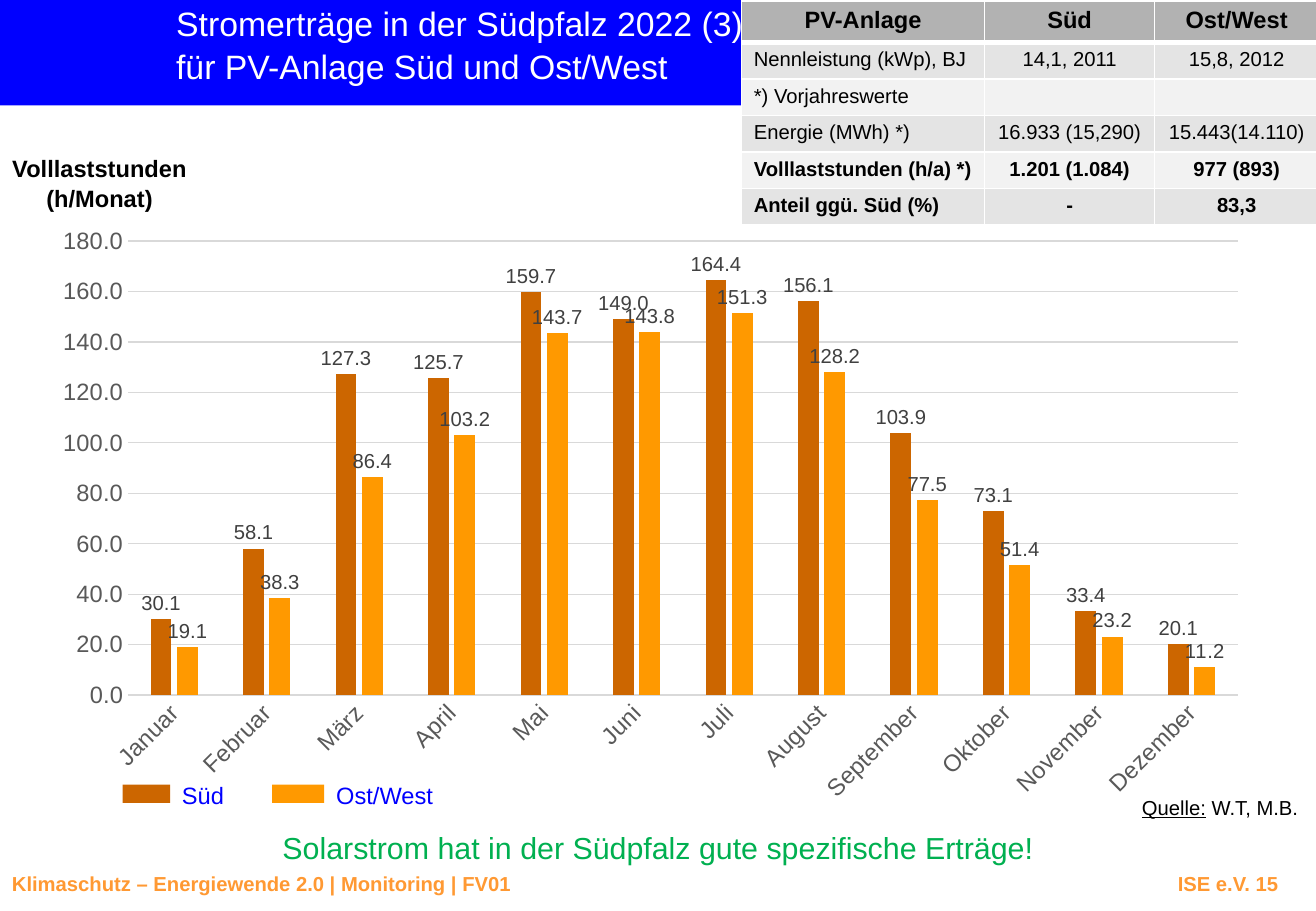
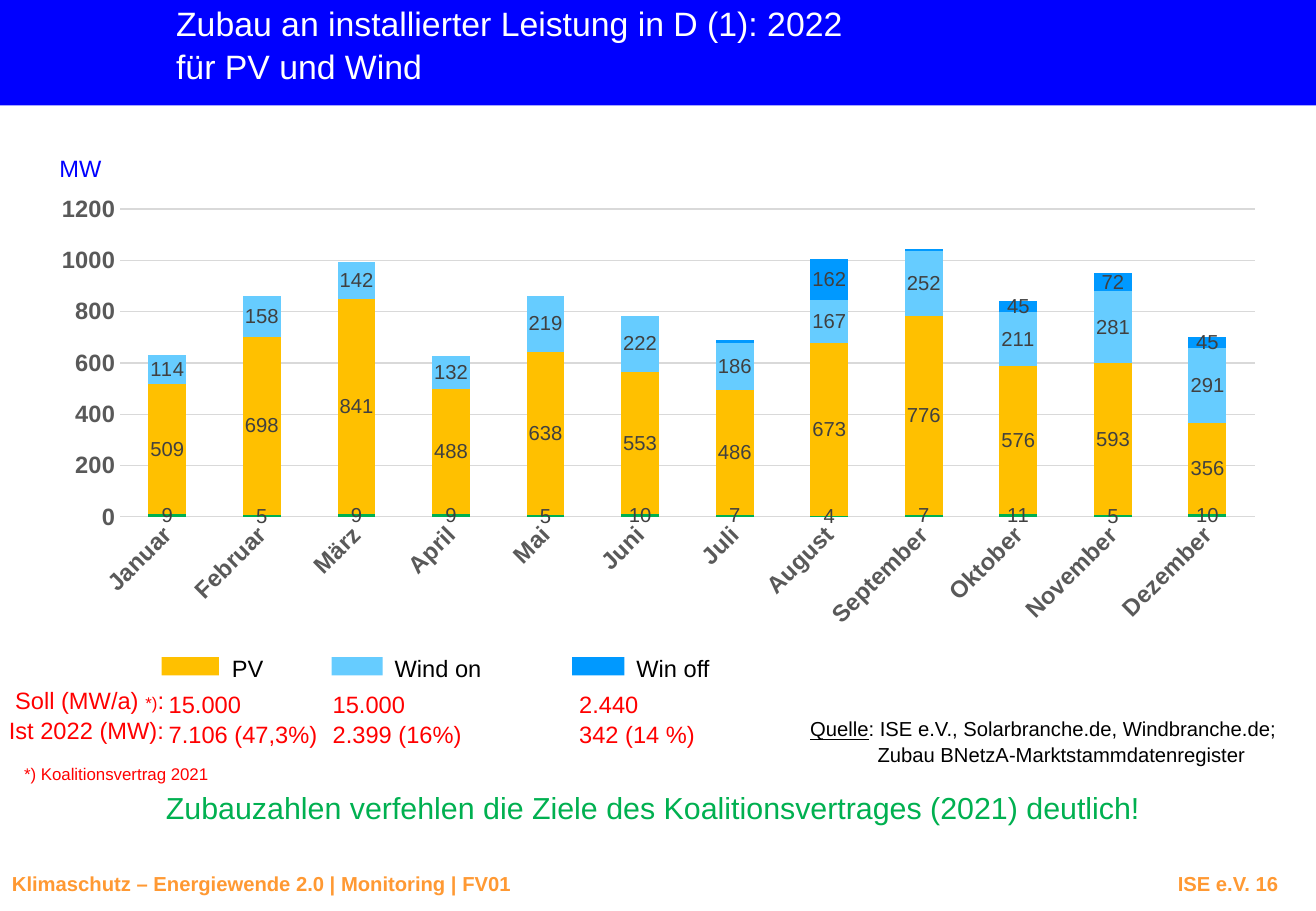
import pptx
import pptx.util
import pptx.chart.data
import pptx.dml.color
import pptx.enum.chart
import pptx.enum.shapes
import pptx.enum.text
import pptx.oxml
import pptx.oxml.ns

Pt = pptx.util.Pt
qn = pptx.oxml.ns.qn
ALIGN = pptx.enum.text.PP_ALIGN
CHART = pptx.enum.chart.XL_CHART_TYPE
PLACE = pptx.enum.chart.XL_LABEL_POSITION

FONT = "Arial"
WIDTH, HEIGHT = 780, 540
HUES = {
    "band": "0000FF", "white": "FFFFFF", "black": "000000", "foot": "FF9933",
    "green": "00B050", "red": "FF0000", "blue": "0000FF",
    "south": "CC6600", "east": "FF9900",
    "sun": "FFC000", "shore": "66CCFF", "sea": "0099FF",
    "head": "B2B2B2", "odd": "E4E4E4", "even": "F2F2F2",
    "axis": "595959", "value": "404040", "grid": "D9D9D9",
}
MONTHS = ["Januar", "Februar", "März", "April", "Mai", "Juni", "Juli",
          "August", "September", "Oktober", "November", "Dezember"]


def hue(name):
    return pptx.dml.color.RGBColor.from_string(HUES[name])


def points(box):
    return [Pt(side) for side in box]


def style(font, size, color, bold=False, under=None):
    font.name = FONT
    font.size = Pt(size)
    font.bold = bold
    font.underline = under
    font.color.rgb = hue(color)


def write(frame, text, size=14, color="black", bold=False, align=ALIGN.LEFT,
          space=None):
    for index, line in enumerate(text.split("\n") if isinstance(text, str) else text):
        para = frame.paragraphs[0] if index == 0 else frame.add_paragraph()
        para.alignment = align
        para.line_spacing = space
        for part in [(line, {})] if isinstance(line, str) else line:
            words, extra = part
            if words:
                run = para.add_run()
                run.text = words
                style(run.font, **{"size": size, "color": color, "bold": bold, **extra})
            else:
                para._p.get_or_add_endParaRPr().set("sz", str(size * 100))


def label(slide, box, text, inset=(7.2, 3.6), wrap=False, **format):
    frame = slide.shapes.add_textbox(*points(box)).text_frame
    frame.word_wrap = wrap
    frame.margin_left = frame.margin_right = Pt(inset[0])
    frame.margin_top = frame.margin_bottom = Pt(inset[1])
    write(frame, text, space=1.05, **format)
    return frame


def block(slide, box, color):
    shape = slide.shapes.add_shape(pptx.enum.shapes.MSO_SHAPE.RECTANGLE, *points(box))
    shape.shadow.inherit = False
    shape.fill.solid()
    shape.fill.fore_color.rgb = hue(color)
    shape.line.fill.background()


def legend(slide, top, color, *items):
    for left, start, fill, text in items:
        block(slide, (left, top, min(34, start - left), 10.8), fill)
        label(slide, (start, top - 6.5, 75, 24.5), text, wrap=True, color=color)


def start(deck, title, number):
    slide = deck.slides.add_slide(deck.slide_layouts[6])
    block(slide, (0, 0, WIDTH, 62.6), "band")
    foot = {"size": 12, "color": "foot", "bold": True, "wrap": True}
    label(slide, (0, 512, 400, 21.6),
          "Klimaschutz – Energiewende 2.0 | Monitoring | FV01", **foot)
    label(slide, (600, 512, 164.8, 21.6), f"ISE e.V. {number}",
          align=ALIGN.RIGHT, **foot)
    label(slide, (104.4, 0.7, 588, 48.2), title, inset=(0, 0), wrap=True,
          size=20, color="white")
    return slide


def claim(slide, top, text, width=WIDTH):
    label(slide, (0, top, width, 31.7), text, inset=(5, 5), wrap=True,
          size=18, color="green", align=ALIGN.CENTER)


def border(cell, lower):
    props = cell._tc.get_or_add_tcPr()
    sides = [("L", 1), ("R", 1), ("T", 1), ("B", lower)]
    for index, (side, width) in enumerate(sides):
        props.insert(index, pptx.oxml.parse_xml(
            f'<a:ln{side} xmlns:a="http://schemas.openxmlformats.org/drawingml/2006/main"'
            f' w="{Pt(width)}"><a:solidFill><a:srgbClr val="{HUES["white"]}"/>'
            f'</a:solidFill></a:ln{side}>'))


def grid(slide, left, top, widths, rows, strong):
    table = slide.shapes.add_table(
        len(rows), len(widths), *points((left, top, sum(widths), 132.5))).table
    for column, width in zip(table.columns, widths):
        column.width = Pt(width)
    for r, row in enumerate(rows):
        table.rows[r].height = Pt(21.6 if r else 24.5)
        fill = ("odd" if r % 2 else "even") if r else "head"
        for c, text in enumerate(row):
            cell = table.cell(r, c)
            cell.fill.solid()
            cell.fill.fore_color.rgb = hue(fill)
            border(cell, 1 if r else 3)
            write(cell.text_frame, text, size=12 if r else 14, bold=r in strong,
                  align=ALIGN.CENTER if c or not r else ALIGN.LEFT)


def layout(chart, box, plot):
    shares = {
        "x": (plot[0] - box[0]) / box[2], "y": (plot[1] - box[1]) / box[3],
        "w": plot[2] / box[2], "h": plot[3] / box[3],
    }
    area = chart._chartSpace.chart.plotArea
    for old in area.findall(qn("c:layout")):
        area.remove(old)
    modes = '<c:xMode val="edge"/><c:yMode val="edge"/>'
    sizes = "".join(f'<c:{key} val="{share:.4f}"/>' for key, share in shares.items())
    area.insert(0, pptx.oxml.parse_xml(
        '<c:layout xmlns:c="http://schemas.openxmlformats.org/drawingml/2006/chart">'
        f'<c:manualLayout><c:layoutTarget val="inner"/>{modes}{sizes}'
        '</c:manualLayout></c:layout>'))


def bars(slide, kind, box, plot, series, top, step, gap, lap, place, format,
         bold=False):
    data = pptx.chart.data.CategoryChartData()
    data.categories = MONTHS
    for name, color, values, rule in series:
        data.add_series(name, values)
    chart = slide.shapes.add_chart(kind, *points(box), data).chart
    chart.has_legend = False
    chart.has_title = False
    style(chart.font, 10, "black")
    layout(chart, box, plot)

    months, scale = chart.category_axis, chart.value_axis
    for axis in (months, scale):
        axis.major_tick_mark = axis.minor_tick_mark = pptx.enum.chart.XL_TICK_MARK.NONE
        style(axis.tick_labels.font, 14, "axis", bold)
    scale.minimum_scale, scale.maximum_scale, scale.major_unit = 0, top, step
    scale.tick_labels.number_format = format
    scale.tick_labels.number_format_is_linked = False
    scale.format.line.fill.background()
    scale.has_major_gridlines = True
    for line in (months.format.line, scale.major_gridlines.format.line):
        line.color.rgb = hue("grid")
        line.width = Pt(0.75)
    months._element.find(qn("c:txPr")).find(qn("a:bodyPr")).set("rot", "-2700000")

    bar = chart.plots[0]
    bar.gap_width, bar.overlap = gap, lap
    bar.vary_by_categories = False
    for item, (name, color, values, rule) in zip(bar.series, series):
        item.invert_if_negative = False
        item.format.fill.solid()
        item.format.fill.fore_color.rgb = hue(color)
        marks = item.data_labels
        marks.show_value = True
        marks.number_format = rule
        marks.number_format_is_linked = False
        marks.position = place
        style(marks.font, 12, "value")


def yields(deck):
    slide = start(deck, "Stromerträge in der Südpfalz 2022 (3):\n"
                  "für PV-Anlage Süd und Ost/West", 15)
    label(slide, (676.8, 470.9, 97.2, 14.4),
          [[("Quelle:", {"under": True}), (" W.T, M.B.", {})]],
          inset=(0, 0), size=12)
    label(slide, (0, 87.1, 118, 41), "Volllaststunden\n(h/Monat)", bold=True,
          align=ALIGN.CENTER)
    grid(slide, 439.6, 0.7, (144, 100.8, 97.2), [
        ("PV-Anlage", "Süd", "Ost/West"),
        ("Nennleistung (kWp), BJ", "14,1, 2011", "15,8, 2012"),
        ("*) Vorjahreswerte", "", ""),
        ("Energie (MWh) *)", "16.933 (15,290)", "15.443(14.110)"),
        ("Volllaststunden (h/a) *)", "1.201 (1.084)", "977 (893)"),
        ("Anteil ggü. Süd (%)", "-", "83,3"),
    ], strong=(0, 4, 5))
    claim(slide, 485.3, "Solarstrom hat in der Südpfalz gute spezifische Erträge!")
    legend(slide, 465.1, "blue", (72.7, 100.8, "south", "Süd"),
           (161.3, 192.2, "east", "Ost/West"))
    rule = "#,##0.0"
    bars(slide, CHART.COLUMN_CLUSTERED, (22.3, 128.2, 725.8, 354.2),
         (75.9, 142.9, 657.8, 269.2), [
             ("Süd", "south", (30.1, 58.1, 127.3, 125.7, 159.7, 149, 164.4,
                               156.1, 103.9, 73.1, 33.4, 20.1), rule),
             ("Ost/West", "east", (19.1, 38.3, 86.4, 103.2, 143.7, 143.8, 151.3,
                                   128.2, 77.5, 51.4, 23.2, 11.2), rule),
         ], 180, 20, 219, -27, PLACE.OUTSIDE_END, rule)


def growth(deck):
    slide = start(deck, "Zubau an installierter Leistung in D (1): 2022\n"
                  "für PV und Wind", 16)
    label(slide, (28.1, 87.1, 40, 24.5), "MW", color="blue")
    source = label(slide, (480.2, 424.1, 278.6, 28.8), [
        [("Quelle", {"under": True}),
         (": ISE e.V., Solarbranche.de, Windbranche.de;", {})],
        "Zubau BNetzA-Marktstammdatenregister"], inset=(0, 0), size=12)
    source.paragraphs[1]._p.get_or_add_pPr().set("marL", str(Pt(40)))
    legend(slide, 389.5, "black", (95.8, 130.3, "sun", "PV"),
           (196.6, 226.8, "shore", "Wind on"), (339.1, 370.1, "sea", "Win off"))
    claim(slide, 461.5, "Zubauzahlen verfehlen die Ziele des Koalitionsvertrages "
          "(2021) deutlich!", 774)
    bars(slide, CHART.COLUMN_STACKED, (22.3, 110.9, 736.6, 267.1),
         (71.1, 124, 672.6, 182.4), [
             ("Sonstige", "green", (9, 5, 9, 9, 5, 10, 7, 4, 7, 11, 5, 10), "0"),
             ("PV", "sun", (509, 698, 841, 488, 638, 553, 486, 673, 776, 576,
                            593, 356), "0"),
             ("Wind on", "shore", (114, 158, 142, 132, 219, 222, 186, 167, 252,
                                   211, 281, 291), "0"),
             ("Win off", "sea", (0, 0, 0, 0, 0, 0, 9, 162, 9, 45, 72, 45),
              '[>9]0;""'),
         ], 1200, 200, 150, 100, PLACE.CENTER, "0", bold=True)
    label(slide, (-2.9, 402.5, 107.3, 41), [
        [("Soll (MW/a) ", {}), ("*)", {"size": 10}), (":", {})],
        "Ist 2022 (MW):"], color="red", align=ALIGN.RIGHT)
    for left, text in ((92.9, "15.000\n7.106 (47,3%)"), (190.1, "15.000\n2.399 (16%)"),
                       (336.2, "2.440\n342 (14 %)")):
        label(slide, (left, 404.6, 110, 41), text, wrap=True, color="red")
    label(slide, (7.2, 448.6, 124.6, 19.4), "*) Koalitionsvertrag 2021",
          size=10, color="red")


def main():
    deck = pptx.Presentation()
    deck.slide_width, deck.slide_height = Pt(WIDTH), Pt(HEIGHT)
    yields(deck)
    growth(deck)
    deck.save("out.pptx")


if __name__ == "__main__":
    main()
